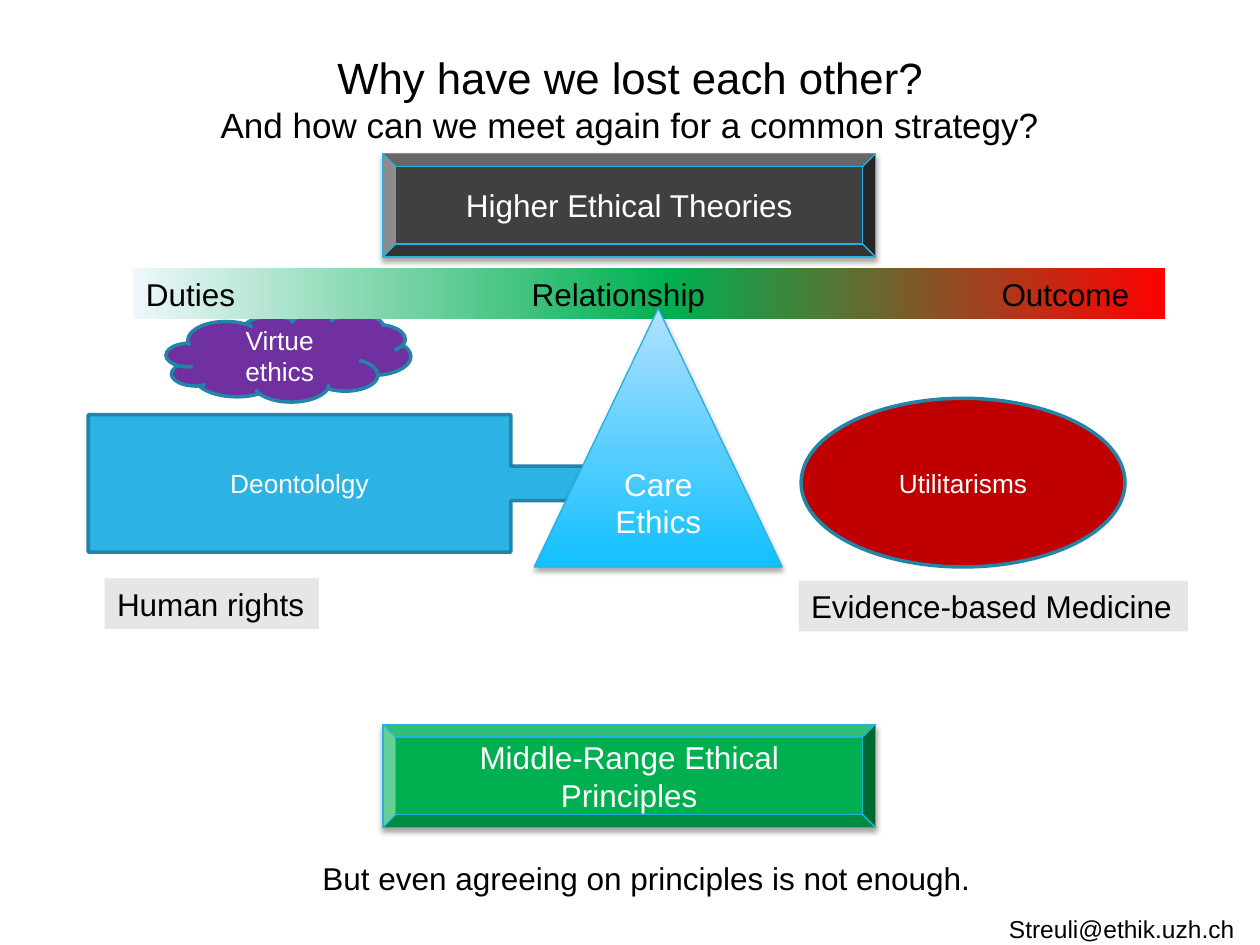
"""Build the slide on how ethical theories relate to a common strategy."""
from dataclasses import dataclass

import lxml.etree
import pptx
import pptx.dml.color
import pptx.enum.shapes
import pptx.enum.text
import pptx.oxml.ns
import pptx.util

Cm = pptx.util.Cm
Pt = pptx.util.Pt
RGB = pptx.dml.color.RGBColor.from_string
SHAPE = pptx.enum.shapes.MSO_SHAPE
ALIGN = pptx.enum.text.PP_ALIGN
qn = pptx.oxml.ns.qn


@dataclass(frozen=True)
class Theme:
    font: str = "Arial"
    dark: str = "000000"
    light: str = "FFFFFF"
    blue: str = "2CB3E3"
    outline: str = "2184A8"
    thin_outline: str = "27B1E2"
    purple: str = "7030A0"
    crimson: str = "C00000"
    green: str = "00B050"
    charcoal: str = "404040"
    grey: str = "E6E6E6"
    spectrum: tuple = ((0, "FF0000"), (48, "00B050"), (100, "EEF7FC"))
    sky: tuple = ((0, "11C0FE"), (100, "B1E0FF"))
    title: int = 25
    subtitle: int = 20
    body: int = 18
    small: int = 15
    footer: int = 14


theme = Theme()


def add_run(p, text, size, color):
    r = p.add_run()
    r.text = text
    r.font.name = theme.font
    r.font.size = Pt(size)
    r.font.color.rgb = RGB(color)


def set_gradient(sp, stops, angle):
    sp.fill.gradient()
    sp.fill.gradient_angle = angle
    stop_list = sp._element.spPr.find(".//" + qn("a:gsLst"))
    stop_list.clear()
    for position, color in stops:
        gs = lxml.etree.SubElement(stop_list, qn("a:gs"), pos=str(position * 1000))
        lxml.etree.SubElement(gs, qn("a:srgbClr"), val=color)


prs = pptx.Presentation()
prs.slide_width, prs.slide_height = Cm(25.4), Cm(19.05)
s = prs.slides.add_slide(prs.slide_layouts[6])

title = s.shapes.add_textbox(Cm(1.5), Cm(0.89), Cm(22.4), Cm(3))
tf = title.text_frame
tf.word_wrap = True
tf.margin_left = tf.margin_right = tf.margin_bottom = 0
tf.margin_top = Cm(0.13)
p = tf.paragraphs[0]
p.alignment = ALIGN.CENTER
add_run(p, "Why have we lost each other?", theme.title, theme.dark)
p.add_line_break()
add_run(p, "And how can we meet again for a common strategy?", theme.subtitle, theme.dark)

theories = [
    ("Deontololgy", SHAPE.RIGHT_ARROW_CALLOUT, 1.78, 8.36, 13.11, 2.77, theme.blue),
    ("Virtue ethics", SHAPE.CLOUD, 3.35, 6.32, 4.93, 1.78, theme.purple),
    ("Utilitarisms", SHAPE.OVAL, 16.15, 8.03, 6.53, 3.4, theme.crimson),
]
for text, kind, left, top, width, height, color in theories:
    sp = s.shapes.add_shape(kind, Cm(left), Cm(top), Cm(width), Cm(height))
    sp.shadow.inherit = False
    sp.fill.solid()
    sp.fill.fore_color.rgb = RGB(color)
    sp.line.color.rgb = RGB(theme.outline)
    sp.line.width = Pt(2)
    p = sp.text_frame.paragraphs[0]
    p.alignment = ALIGN.CENTER
    add_run(p, text, theme.small, theme.light)

bar = s.shapes.add_shape(SHAPE.RECTANGLE, Cm(2.69), Cm(5.41), Cm(20.8), Cm(1.02))
bar.shadow.inherit = False
bar.line.fill.background()
set_gradient(bar, theme.spectrum, 180)
p = bar.text_frame.paragraphs[0]
p.alignment = ALIGN.LEFT
tabs = lxml.etree.SubElement(p._p.get_or_add_pPr(), qn("a:tabLst"))
for position in (7.78, 17.25):
    lxml.etree.SubElement(tabs, qn("a:tab"), pos=str(Cm(position)), algn="l")
add_run(p, "Duties\tRelationship\tOutcome", theme.body, theme.dark)

labels = [
    ("Streuli@ethik.uzh.ch", 20.09, 18.31, 5.08, 1.45, theme.footer, None),
    ("Human rights", 2.11, 11.66, 4.32, 1.02, theme.body, theme.grey),
    ("Evidence-based Medicine", 16.1, 11.71, 7.85, 1.02, theme.body, theme.grey),
    ("But even agreeing on principles is not enough.", 6.25, 17.2, 13.69, 1.02, theme.body, None),
]
for text, left, top, width, height, size, color in labels:
    sp = s.shapes.add_textbox(Cm(left), Cm(top), Cm(width), Cm(height))
    sp.text_frame.word_wrap = False
    if color:
        sp.fill.solid()
        sp.fill.fore_color.rgb = RGB(color)
    add_run(sp.text_frame.paragraphs[0], text, size, theme.dark)

raised = [
    ("Care Ethics", SHAPE.ISOSCELES_TRIANGLE, 10.77, 6.22, 5, 5.21, None),
    ("Higher Ethical Theories", SHAPE.BEVEL, 7.72, 3.1, 9.93, 2.08, theme.charcoal),
    ("Middle-Range Ethical Principles", SHAPE.BEVEL, 7.72, 14.6, 9.93, 2.08, theme.green),
]
for text, kind, left, top, width, height, color in raised:
    sp = s.shapes.add_shape(kind, Cm(left), Cm(top), Cm(width), Cm(height))
    if color:
        sp.fill.solid()
        sp.fill.fore_color.rgb = RGB(color)
    else:
        set_gradient(sp, theme.sky, 90)
    sp.line.color.rgb = RGB(theme.thin_outline)
    sp.line.width = Pt(0.75)
    sp.shadow.inherit = False
    shadow = lxml.etree.SubElement(
        sp._element.spPr.find(qn("a:effectLst")), qn("a:outerShdw"),
        blurRad=str(Pt(3.1)), dist=str(Pt(1.8)), dir="5400000", rotWithShape="0")
    tint = lxml.etree.SubElement(shadow, qn("a:srgbClr"), val=theme.dark)
    lxml.etree.SubElement(tint, qn("a:alpha"), val="35000")
    p = sp.text_frame.paragraphs[0]
    p.alignment = ALIGN.CENTER
    add_run(p, text, theme.body, theme.light)

prs.save("out.pptx")
